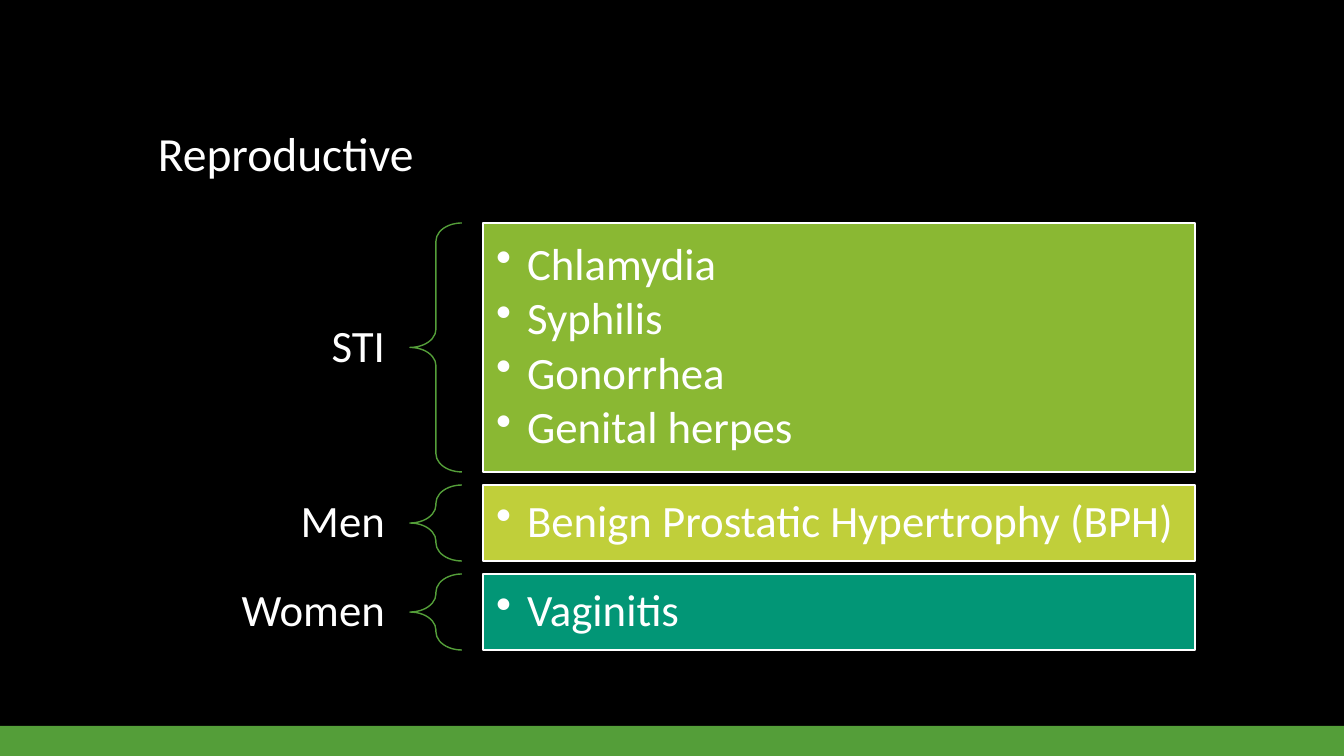
from lxml import etree
from pptx import Presentation
from pptx.dml.color import RGBColor
from pptx.enum.shapes import MSO_SHAPE
from pptx.enum.text import MSO_ANCHOR, PP_ALIGN
from pptx.oxml.ns import qn
from pptx.util import Emu, Pt

RECTANGLE = MSO_SHAPE.RECTANGLE
LEFT_BRACE = MSO_SHAPE.LEFT_BRACE
BOTTOM, MIDDLE = MSO_ANCHOR.BOTTOM, MSO_ANCHOR.MIDDLE
LEFT, RIGHT = PP_ALIGN.LEFT, PP_ALIGN.RIGHT

EMU_PER_PX = 914400 / 100.8
COLORS = {
    "background": "000000",
    "text": "FFFFFF",
    "accent": "549E39",
    "sti": "8AB833",
    "men": "C0CF3A",
    "women": "029676",
}


def px(*lengths):
    return [Emu(round(length * EMU_PER_PX)) for length in lengths]


def write(shape, lines, size=32, align=LEFT, anchor=MIDDLE, insets=(10, 5), bullet_indent=0):
    frame = shape.text_frame
    frame.word_wrap = True
    frame.vertical_anchor = anchor
    frame.margin_left, frame.margin_top = px(*insets)
    frame.margin_right, frame.margin_bottom = px(*insets)
    for index, line in enumerate(lines):
        paragraph = frame.paragraphs[0] if index == 0 else frame.add_paragraph()
        paragraph.alignment = align
        paragraph.line_spacing = 0.9
        run = paragraph.add_run()
        run.text = line
        run.font.name = "Calibri"
        run.font.size = Pt(size)
        run.font.color.rgb = RGBColor.from_string(COLORS["text"])
        if bullet_indent:
            paragraph.space_after = Pt(4.4)
            properties = paragraph._p.get_or_add_pPr()
            indent = px(bullet_indent)[0]
            properties.set("marL", str(indent))
            properties.set("indent", str(-indent))
            etree.SubElement(properties, qn("a:buChar")).set("char", "•")


prs = Presentation()
prs.slide_width, prs.slide_height = px(1344, 756)
slide = prs.slides.add_slide(prs.slide_layouts[6])
slide.background.fill.solid()
slide.background.fill.fore_color.rgb = RGBColor.from_string(COLORS["background"])

footer_band = slide.shapes.add_shape(RECTANGLE, *px(0, 726, 1344, 30))
footer_band.shadow.inherit = False
footer_band.fill.solid()
footer_band.fill.fore_color.rgb = RGBColor.from_string(COLORS["accent"])
footer_band.line.fill.background()

title = slide.shapes.add_textbox(*px(148, 51, 1048, 136))
write(title, ["Reproductive"], size=34, anchor=BOTTOM)

GROUPS = [
    ("STI", "sti", 249, ["Chlamydia", "Syphilis", "Gonorrhea", "Genital herpes"]),
    ("Men", "men", 76, ["Benign Prostatic Hypertrophy (BPH)"]),
    ("Women", "women", 76, ["Vaginitis"]),
]
GROUP_GAP = 13
LABEL_HEIGHT = 70

top = 223
for group_name, color, height, conditions in GROUPS:
    label_top = top + (height - LABEL_HEIGHT) / 2
    label = slide.shapes.add_textbox(*px(148, label_top, 262, LABEL_HEIGHT))
    write(label, [group_name], align=RIGHT, insets=(25, 9))

    brace = slide.shapes.add_shape(LEFT_BRACE, *px(410, top, 52, height))
    brace.shadow.inherit = False
    brace.adjustments[0] = 0.35
    brace.fill.background()
    brace.line.color.rgb = RGBColor.from_string(COLORS["accent"])
    brace.line.width = Pt(1)

    panel = slide.shapes.add_shape(RECTANGLE, *px(483, top, 712, height))
    panel.shadow.inherit = False
    panel.fill.solid()
    panel.fill.fore_color.rgb = RGBColor.from_string(COLORS[color])
    panel.line.color.rgb = RGBColor.from_string(COLORS["text"])
    panel.line.width = Pt(1)
    write(panel, conditions, insets=(13, 13), bullet_indent=31)

    top += height + GROUP_GAP

prs.save("out.pptx")
